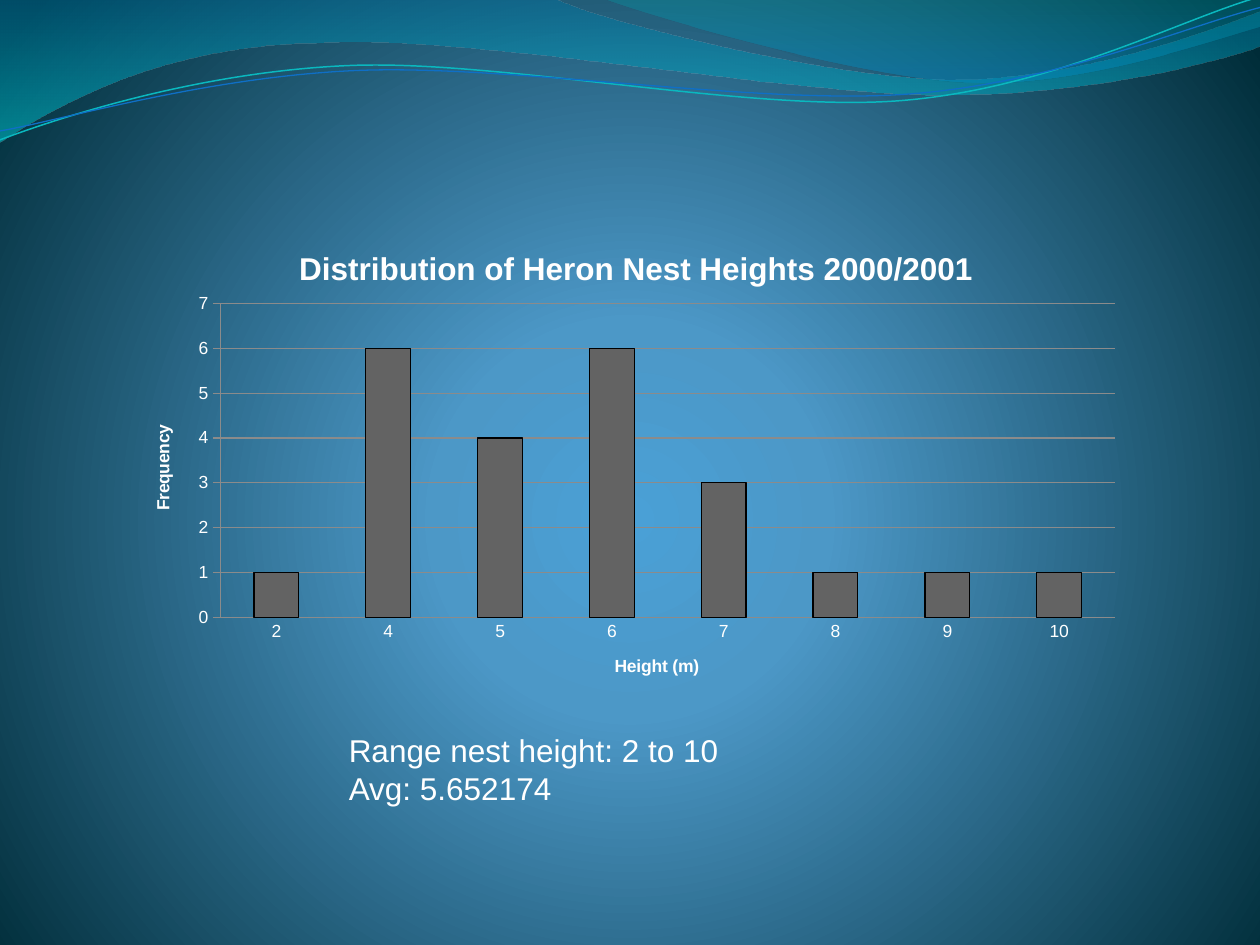
"""Build a slide with the distribution of heron nest heights on a wave background."""
from math import cos, radians, sin

from lxml import etree
from pptx import Presentation
from pptx.chart.data import CategoryChartData
from pptx.dml.color import RGBColor
from pptx.enum.chart import XL_CHART_TYPE, XL_TICK_MARK
from pptx.enum.text import MSO_AUTO_SIZE
from pptx.oxml import parse_xml
from pptx.oxml.ns import nsdecls, qn
from pptx.util import Inches, Pt

COLUMNS = XL_CHART_TYPE.COLUMN_CLUSTERED
TICK_NONE, TICK_CROSS = XL_TICK_MARK.NONE, XL_TICK_MARK.CROSS
GROW = MSO_AUTO_SIZE.SHAPE_TO_FIT_TEXT
FONT = "Arial"
COLORS = {
    "text": "FFFFFF", "bar": "636363", "bar_edge": "000000", "grid": "8B8B8B",
    "center": "4AA0D6", "middle": "4C98C7", "edge": "002C38",
    "wave_blue": "0074A1", "wave_cyan": "00C6CF",
    "crest_teal": "00A1A9", "crest_blue": "008BBF",
    "teal_line": "0AB8BF", "blue_line": "0F6FC6",
}
RGB = {name: RGBColor.from_string(value) for name, value in COLORS.items()}
LINEAR = '<a:lin ang="5400000" scaled="0"/>'
RADIAL = ('<a:path path="circle"><a:fillToRect l="10000" t="110000" '
          'r="10000" b="100000"/></a:path>')
TILT = 2.7
CHART_WIDTH, CHART_HEIGHT = 8, 3.83


def set_gradient(fill, properties, stops, direction):
    fill.gradient()
    gradient = parse_xml(f'<a:gradFill {nsdecls("a")} rotWithShape="1">'
                         f'<a:gsLst/>{direction}</a:gradFill>')
    for position, color, alpha in stops:
        stop = etree.SubElement(gradient[0], qn("a:gs"), pos=str(position * 1000))
        tint = etree.SubElement(stop, qn("a:srgbClr"), val=COLORS[color])
        if alpha < 100:
            etree.SubElement(tint, qn("a:alpha"), val=str(alpha * 1000))
    properties.replace(properties.find(qn("a:gradFill")), gradient)


def add_curve(shapes, start, segments, closed):
    points = [pair for segment in segments for pair in zip(segment[::2], segment[1::2])]
    builder = shapes.build_freeform(Inches(start[0]), Inches(start[1]))
    builder.add_line_segments([(Inches(x), Inches(y)) for x, y in points], close=closed)
    curve = builder.convert_to_shape()
    curve.shadow.inherit = False
    steps = iter(list(curve.element.iter(qn("a:lnTo"))))
    for segment in segments:
        first = next(steps)
        if len(segment) == 6:
            bezier = etree.Element(qn("a:cubicBezTo"))
            first.addprevious(bezier)
            for step in (first, next(steps), next(steps)):
                bezier.append(step[0])
                step.getparent().remove(step)
    return curve


prs = Presentation()
prs.slide_width, prs.slide_height = Inches(10), Inches(7.5)
slide = prs.slides.add_slide(prs.slide_layouts[6])
background_fill = slide.background.fill
background_fill.solid()
set_gradient(background_fill, slide.element.find(".//" + qn("p:bgPr")),
             [(0, "center", 100), (25, "middle", 100), (100, "edge", 100)], RADIAL)

waves = [
    ((0, -0.01),
     [(4.4, -0.01), (4.76, 0.17, 6.64, 0.63, 7.58, 0.63),
      (8.53, 0.63, 9.58, 0.26, 10, 0.09), (10.01, 0.36),
      (9.83, 0.44, 8.7, 0.76, 7.46, 0.75), (6.22, 0.75, 3.82, 0.28, 2.57, 0.34),
      (1.29, 0.35, 0.46, 0.83, -0.01, 1.13)],
     [(0, "wave_blue", 45), (100, "wave_cyan", 55)]),
    ((4.79, -0.01),
     [(5.09, 0.11, 6.82, 0.62, 7.69, 0.65), (8.56, 0.69, 9.61, 0.32, 10, 0.21), (10, 0)],
     [(0, "crest_teal", 30), (80, "crest_blue", 45)]),
]
for start, segments, stops in waves:
    wave = add_curve(slide.shapes, start, segments, True)
    set_gradient(wave.fill, wave.element.spPr, stops, LINEAR)
    wave.line.fill.background()

ripples = [
    ((0, 1.11),
     [(0.48, 0.93, 1.58, 0.57, 2.77, 0.52), (3.95, 0.47, 5.93, 0.89, 7.13, 0.8),
      (8.33, 0.71, 9.38, 0.15, 9.98, -0.02)], (4.99, 0.57), "teal_line", 0.85),
    ((0, 1.04),
     [(0.47, 0.96, 1.64, 0.61, 2.83, 0.56), (4.03, 0.51, 5.97, 0.83, 7.17, 0.75),
      (8.36, 0.67, 9.41, 0.21, 10, 0.06)], (5, 0.59), "blue_line", 0.75),
]
c, s = cos(radians(TILT)), sin(radians(TILT))
for start, segments, (mid_x, mid_y), color, width in ripples:
    level = []
    for segment in [start, *segments]:
        level.append([])
        for x, y in zip(segment[::2], segment[1::2]):
            dx, dy = x - mid_x, y - mid_y
            level[-1] += [mid_x + dx * c - dy * s, mid_y + dx * s + dy * c]
    ripple = add_curve(slide.shapes, level[0], level[1:], False)
    ripple.rotation = 360 - TILT
    ripple.fill.background()
    ripple.line.color.rgb = RGB[color]
    ripple.line.width = Pt(width)

nest_counts = CategoryChartData()
nest_counts.categories = ["2", "4", "5", "6", "7", "8", "9", "10"]
nest_counts.add_series("Series 1", [1, 6, 4, 6, 3, 1, 1, 1])
chart = slide.shapes.add_chart(COLUMNS, Inches(1), Inches(1.75), Inches(CHART_WIDTH),
                               Inches(CHART_HEIGHT), nest_counts).chart
chart.has_legend = False
chart.font.name, chart.font.size = FONT, Pt(10)
chart.font.color.rgb = RGB["text"]

height_axis, frequency_axis = chart.category_axis, chart.value_axis
for titled, caption, size in [
        (chart, "Distribution of Heron Nest Heights 2000/2001", 18),
        (height_axis, "Height (m)", 10), (frequency_axis, "Frequency", 10)]:
    heading = titled.chart_title if titled is chart else titled.axis_title
    run = heading.text_frame.paragraphs[0].add_run()
    run.text = caption
    run.font.name, run.font.size, run.font.bold = FONT, Pt(size), True
    run.font.color.rgb = RGB["text"]
chart.chart_title.include_in_layout = False

height_axis.major_tick_mark = TICK_NONE
frequency_axis.major_tick_mark = TICK_CROSS
frequency_axis.minimum_scale, frequency_axis.maximum_scale = 0, 7
frequency_axis.major_unit = 1
frequency_axis.has_major_gridlines = True
for ruled in (height_axis, frequency_axis, frequency_axis.major_gridlines):
    ruled.format.line.color.rgb = RGB["grid"]
    ruled.format.line.width = Pt(0.75)

plot = chart.plots[0]
plot.vary_by_categories = False
plot.gap_width = 150
bars = plot.series[0].format
bars.fill.solid()
bars.fill.fore_color.rgb = RGB["bar"]
bars.line.color.rgb = RGB["bar_edge"]
bars.line.width = Pt(0.75)

modes = [("xMode", "edge"), ("yMode", "edge")]
for part, position, settings in [
        ("c:title", 1, modes + [("x", 1.33 / CHART_WIDTH), ("y", 0.17 / CHART_HEIGHT)]),
        ("c:plotArea", 0, [("layoutTarget", "inner")] + modes + [
            ("x", 0.75 / CHART_WIDTH), ("y", 0.66 / CHART_HEIGHT),
            ("w", 7.1 / CHART_WIDTH), ("h", 2.49 / CHART_HEIGHT)])]:
    area = chart.element.find(".//" + qn(part))
    for old_layout in area.findall(qn("c:layout")):
        area.remove(old_layout)
    layout = etree.Element(qn("c:layout"))
    manual = etree.SubElement(layout, qn("c:manualLayout"))
    for tag, value in settings:
        etree.SubElement(manual, qn(f"c:{tag}")).set("val", str(value))
    area.insert(position, layout)

summary = slide.shapes.add_textbox(Inches(2.67), Inches(5.75), Inches(5), Inches(0.71)).text_frame
summary.word_wrap = True
summary.auto_size = GROW
for index, statement in enumerate(["Range nest height: 2 to 10", "Avg: 5.652174"]):
    paragraph = summary.add_paragraph() if index else summary.paragraphs[0]
    run = paragraph.add_run()
    run.text = statement
    run.font.name, run.font.size = FONT, Pt(18)
    run.font.color.rgb = RGB["text"]

prs.save("out.pptx")
